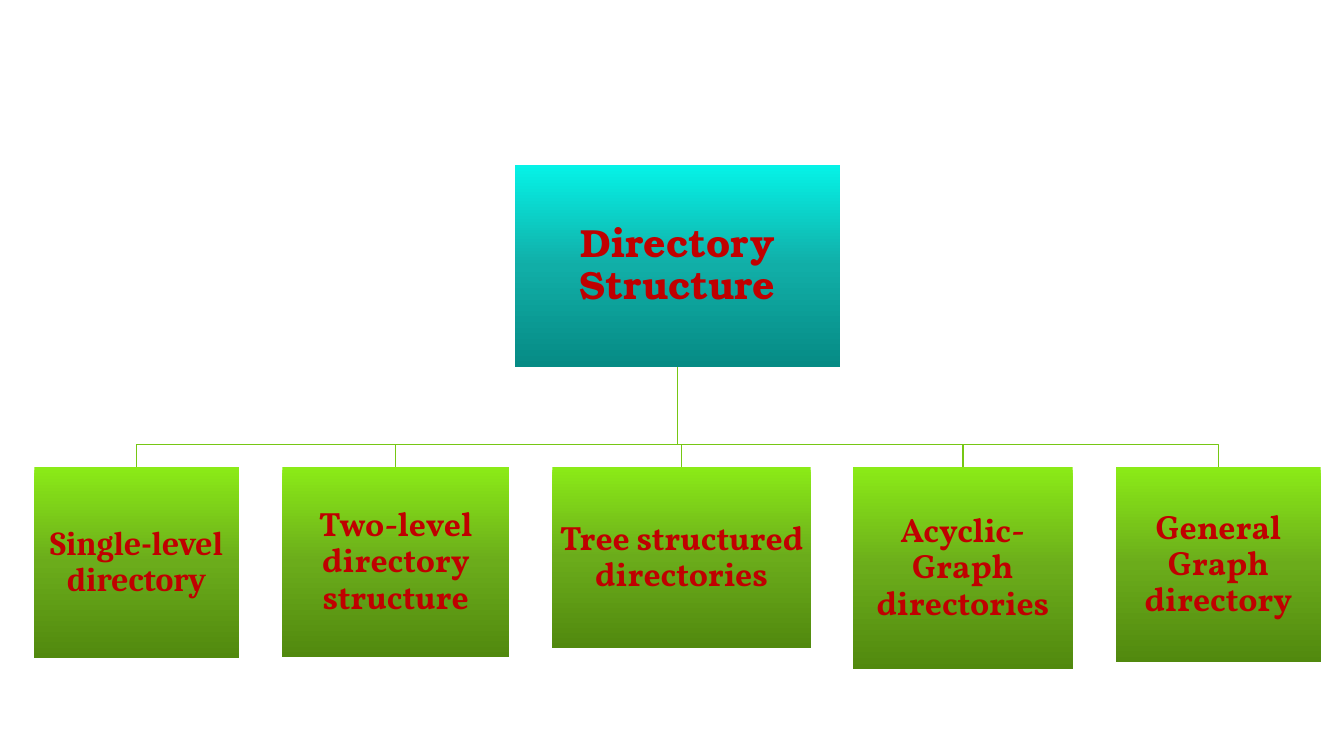
import copy

import pptx
import pptx.dml.color
import pptx.enum.shapes
import pptx.enum.text
import pptx.oxml.ns
import pptx.util
from pptx.util import Inches

COLORS = {"text": "C00000", "branch": "76C714"}
GRADIENTS = {
    "root": ["06F2E7", "11AEA7", "068B85"],
    "kind": ["8BEB17", "6BAC1B", "51890E"],
}
ROOT_LEFT, ROOT_TOP, ROOT_WIDTH, ROOT_HEIGHT = 5.11, 1.64, 3.22, 2
BAR_Y = 4.41
KINDS_TOP = 4.63

# Text, left, width, height and font of each kind of directory
KINDS = [
    ("Single-level directory", 0.34, 2.03, 1.9, "Cambria"),
    ("Two-level directory structure", 2.8, 2.25, 1.89, "Vollkorn"),
    ("Tree structured directories", 5.48, 2.56, 1.8, "Vollkorn"),
    ("Acyclic-Graph directories", 8.46, 2.18, 2.01, "Vollkorn"),
    ("General Graph directory", 11.07, 2.03, 1.94, "Vollkorn"),
]


def rgb(value):
    return pptx.dml.color.RGBColor.from_string(value)


def fill_gradient(fill, box, colors):
    """Fill from top to bottom with evenly spaced colours."""
    fill.gradient()
    fill.gradient_angle = 270
    stop_list = box._element.spPr.find(".//" + pptx.oxml.ns.qn("a:gsLst"))
    stop_list.insert(1, copy.deepcopy(stop_list[0]))
    for index, (stop, color) in enumerate(zip(fill.gradient_stops, colors)):
        stop.color.rgb = rgb(color)
        stop.position = index / (len(colors) - 1)


def add_box(slide, text, left, top, width, height, colors, font_name, size):
    box = slide.shapes.add_shape(
        pptx.enum.shapes.MSO_SHAPE.RECTANGLE,
        Inches(left), Inches(top), Inches(width), Inches(height))
    box.shadow.inherit = False
    box.line.fill.background()
    fill_gradient(box.fill, box, colors)

    frame = box.text_frame
    frame.word_wrap = True
    frame.vertical_anchor = pptx.enum.text.MSO_ANCHOR.MIDDLE
    frame.margin_left = frame.margin_right = Inches(0.02)
    frame.margin_top = frame.margin_bottom = Inches(0.02)
    frame.text = text
    label = frame.paragraphs[0]
    label.alignment = pptx.enum.text.PP_ALIGN.CENTER
    label.line_spacing = 0.9
    font = label.runs[0].font
    font.name = font_name
    font.size = pptx.util.Pt(size)
    font.bold = True
    font.color.rgb = rgb(COLORS["text"])


def add_branch(slide, start_x, start_y, end_x, end_y):
    """Draw the bent line from the root down to one kind."""
    outline = slide.shapes.build_freeform(Inches(start_x), Inches(start_y))
    bends = [(start_x, BAR_Y), (end_x, BAR_Y), (end_x, end_y)]
    outline.add_line_segments(
        [(Inches(x), Inches(y)) for x, y in bends], close=False)
    branch = outline.convert_to_shape()
    branch.shadow.inherit = False
    branch.fill.background()
    branch.line.color.rgb = rgb(COLORS["branch"])
    branch.line.width = pptx.util.Pt(1)


def main():
    deck = pptx.Presentation()
    deck.slide_width = Inches(13.33)
    deck.slide_height = Inches(7.5)
    slide = deck.slides.add_slide(deck.slide_layouts[6])

    # Branches, behind the boxes
    for _, left, width, _, _ in KINDS:
        add_branch(slide, ROOT_LEFT + ROOT_WIDTH / 2, ROOT_TOP + ROOT_HEIGHT,
                   left + width / 2, KINDS_TOP)

    # Root
    add_box(slide, "Directory Structure", ROOT_LEFT, ROOT_TOP, ROOT_WIDTH,
            ROOT_HEIGHT, GRADIENTS["root"], "TeX Gyre Bonum", 28)

    # Kinds of directory
    for text, left, width, height, font_name in KINDS:
        add_box(slide, text, left, KINDS_TOP, width, height,
                GRADIENTS["kind"], font_name, 24)

    deck.save("out.pptx")


if __name__ == "__main__":
    main()
